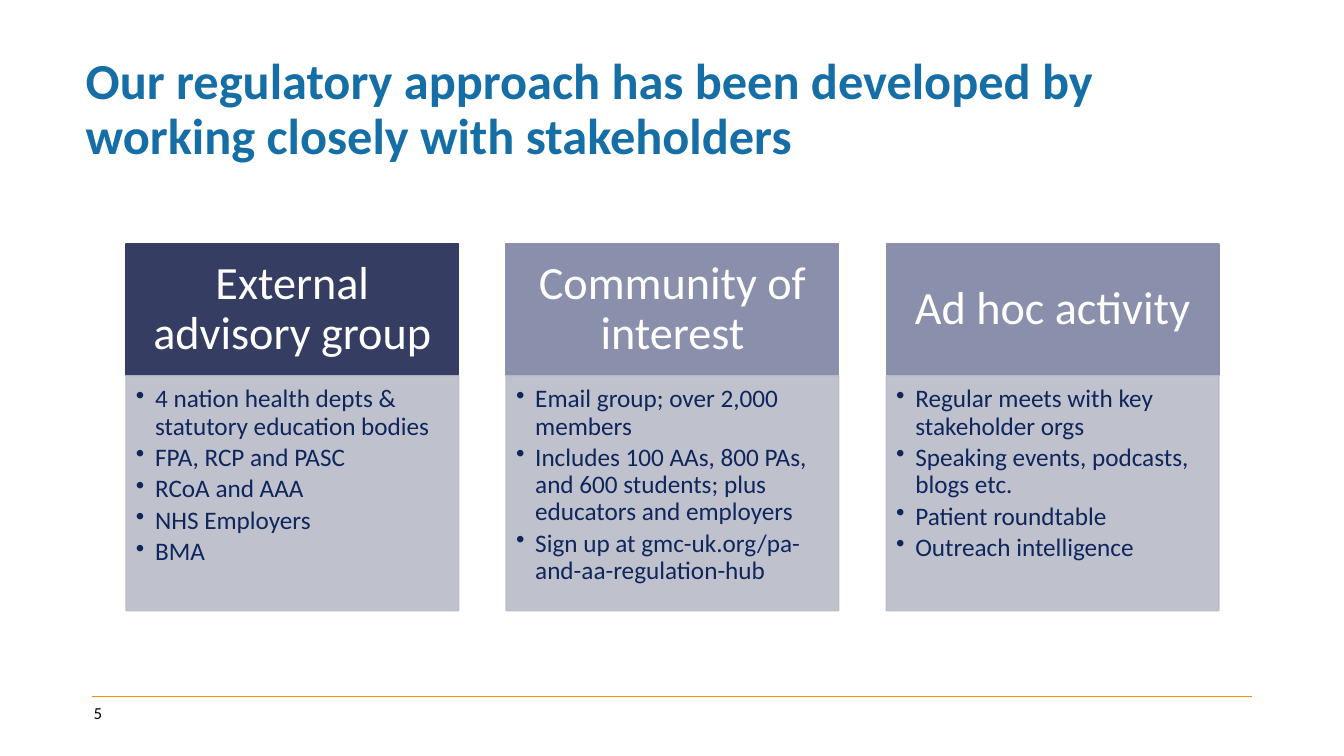
"""Build the slide on how stakeholders shaped the regulatory approach."""
from lxml import etree
from pptx import Presentation
from pptx.dml.color import RGBColor
from pptx.enum.shapes import MSO_CONNECTOR, MSO_SHAPE
from pptx.enum.text import MSO_ANCHOR, MSO_AUTO_SIZE, PP_ALIGN
from pptx.oxml.ns import qn
from pptx.util import Pt

PX = 9144
STRAIGHT, RECTANGLE = MSO_CONNECTOR.STRAIGHT, MSO_SHAPE.RECTANGLE
TOP, MIDDLE = MSO_ANCHOR.TOP, MSO_ANCHOR.MIDDLE
LEFT, CENTER = PP_ALIGN.LEFT, PP_ALIGN.CENTER

THEME = {
    "font": "Calibri",
    "title": "156EA5", "rule": "F39200", "number": "000000",
    "lead": "353E62", "other": "8A90AC", "panel": "B9BBC8",
    "heading": "FFFFFF", "bullet": "0F265C",
    "title_size": 36, "heading_size": 33, "bullet_size": 18, "number_size": 12,
}

COLUMNS = [
    ("External advisory group", "lead", [
        "4 nation health depts & statutory education bodies",
        "FPA, RCP and PASC", "RCoA and AAA", "NHS Employers", "BMA"]),
    ("Community of interest", "other", [
        "Email group; over 2,000 members",
        "Includes 100 AAs, 800 PAs, and 600 students; plus educators and employers",
        "Sign up at gmc-uk.org/pa-and-aa-regulation-hub"]),
    ("Ad hoc activity", "other", [
        "Regular meets with key stakeholder orgs",
        "Speaking events, podcasts, blogs etc.",
        "Patient roundtable", "Outreach intelligence"]),
]
COLUMN_LEFT, COLUMN_PITCH, COLUMN_WIDTH = 125, 377, 330
HEADING_TOP, HEADING_HEIGHT = 242, 130
PANEL_TOP, PANEL_HEIGHT = 373, 233
BULLET_INDENT = 19


def write(frame, lines, role, align, anchor, insets, spacing=0.9, bold=False, bullets=False):
    """Fill a text frame with paragraphs in one style."""
    frame.word_wrap = True
    frame.auto_size = MSO_AUTO_SIZE.NONE
    frame.vertical_anchor = anchor
    (frame.margin_left, frame.margin_top,
     frame.margin_right, frame.margin_bottom) = [inset * PX for inset in insets]
    frame.text = "\n".join(lines)
    for paragraph in frame.paragraphs:
        if bullets:
            properties = paragraph._p.get_or_add_pPr()
            properties.set("marL", str(BULLET_INDENT * PX))
            properties.set("indent", str(-BULLET_INDENT * PX))
            etree.SubElement(properties, qn("a:buChar")).set("char", "•")
            paragraph.space_after = Pt(3)
        paragraph.alignment = align
        paragraph.line_spacing = spacing
        font = paragraph.runs[0].font
        font.name = THEME["font"]
        font.size = Pt(THEME[role + "_size"])
        font.bold = bold
        font.color.rgb = RGBColor.from_string(THEME[role])


def add_block(left, top, width, height, colour, opacity=100):
    """Add a rectangle whose fill and outline share one colour."""
    block = slide.shapes.add_shape(RECTANGLE, left * PX, top * PX, width * PX, height * PX)
    block.shadow.inherit = False
    block.fill.solid()
    block.line.width = Pt(1)
    for paint in (block.fill.fore_color, block.line.color):
        paint.rgb = RGBColor.from_string(THEME[colour])
    if opacity < 100:
        for tint in block._element.spPr.iter(qn("a:srgbClr")):
            etree.SubElement(tint, qn("a:alpha")).set("val", str(opacity * 1000))
    return block


deck = Presentation()
deck.slide_width, deck.slide_height = 1333 * PX, 750 * PX
slide = deck.slides.add_slide(deck.slide_layouts[5])

title = slide.shapes.title
title.left, title.top, title.width, title.height = 75 * PX, 51 * PX, 1167 * PX, 113 * PX
write(title.text_frame,
      ["Our regulatory approach has been developed by working closely with stakeholders"],
      "title", LEFT, TOP, (10, 5, 10, 5), bold=True)

footer_rule = slide.shapes.add_connector(STRAIGHT, 91 * PX, 691 * PX, 1242 * PX, 691 * PX)
footer_rule.line.color.rgb = RGBColor.from_string(THEME["rule"])
footer_rule.line.width = Pt(0.5)
etree.SubElement(footer_rule._element.spPr, qn("a:effectLst"))

page_number = slide.shapes.add_textbox(83 * PX, 695 * PX, 49 * PX, 25 * PX)
write(page_number.text_frame, ["5"], "number", LEFT, MIDDLE, (10, 5, 10, 5), spacing=1.0)

for index, (group, colour, points) in enumerate(COLUMNS):
    left = COLUMN_LEFT + index * COLUMN_PITCH
    heading = add_block(left, HEADING_TOP, COLUMN_WIDTH, HEADING_HEIGHT, colour)
    write(heading.text_frame, [group], "heading", CENTER, MIDDLE, (26, 15, 26, 15))
    panel = add_block(left, PANEL_TOP, COLUMN_WIDTH, PANEL_HEIGHT, "panel", opacity=90)
    write(panel.text_frame, points, "bullet", LEFT, TOP, (10, 10, 14, 16), bullets=True)

deck.save("out.pptx")
